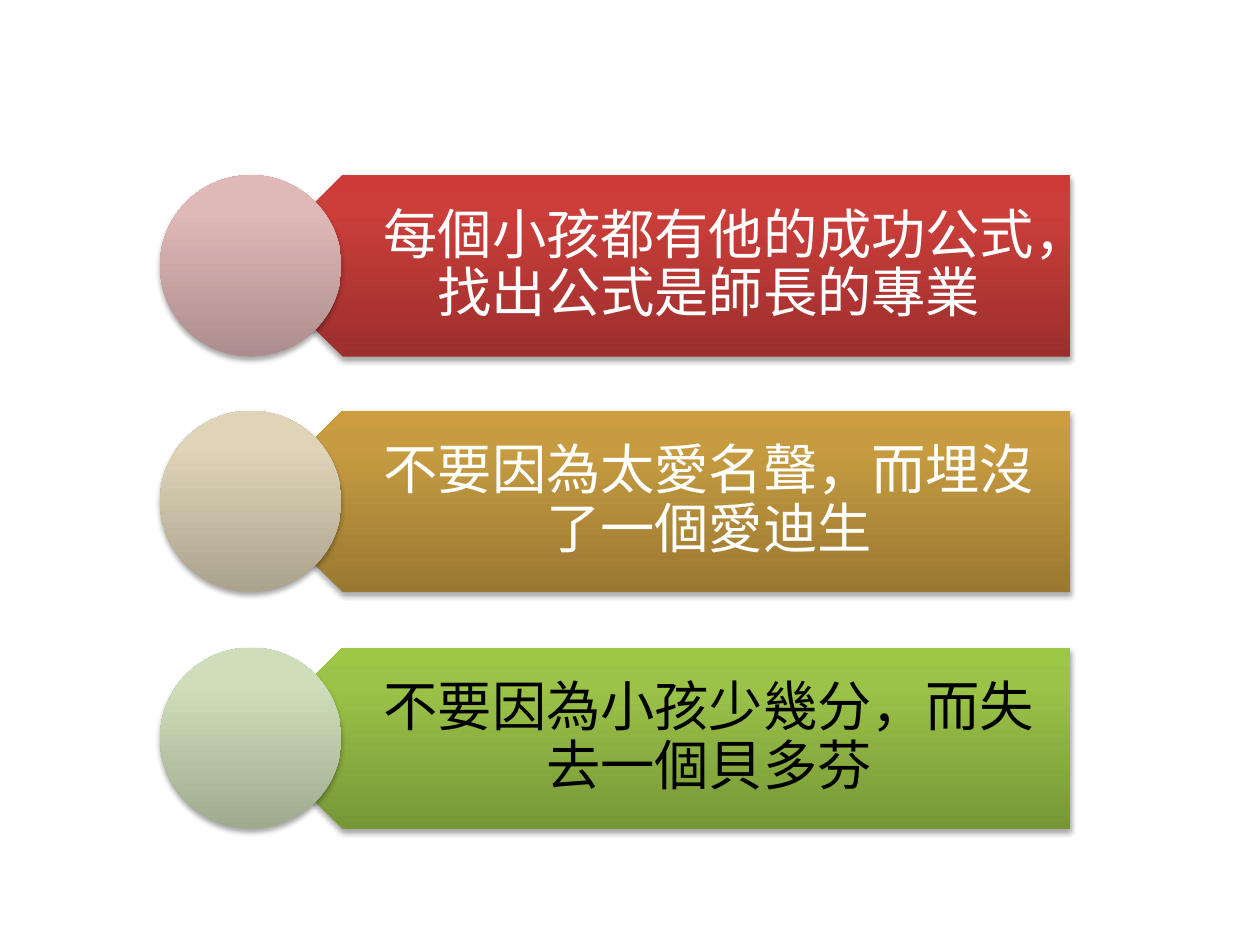
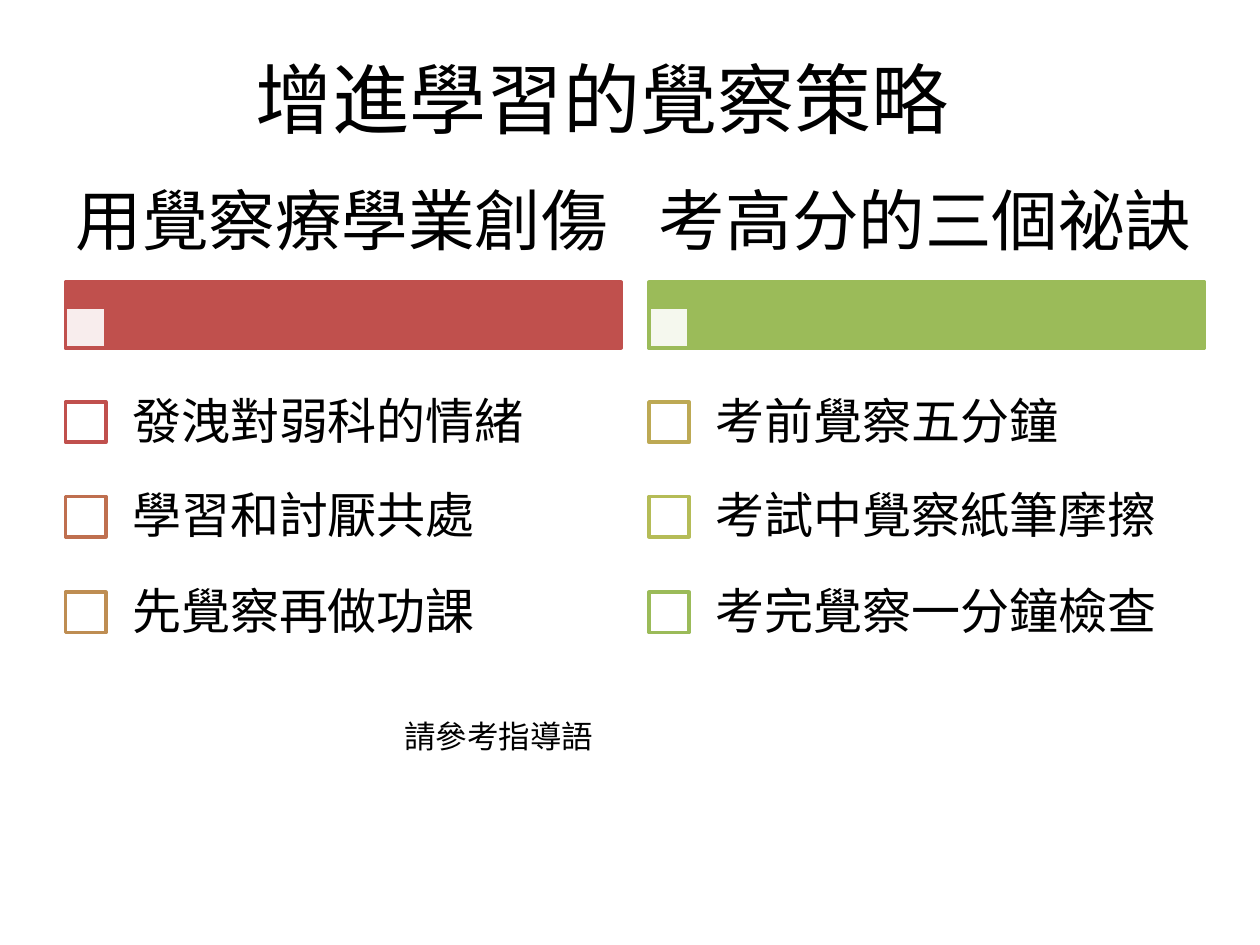
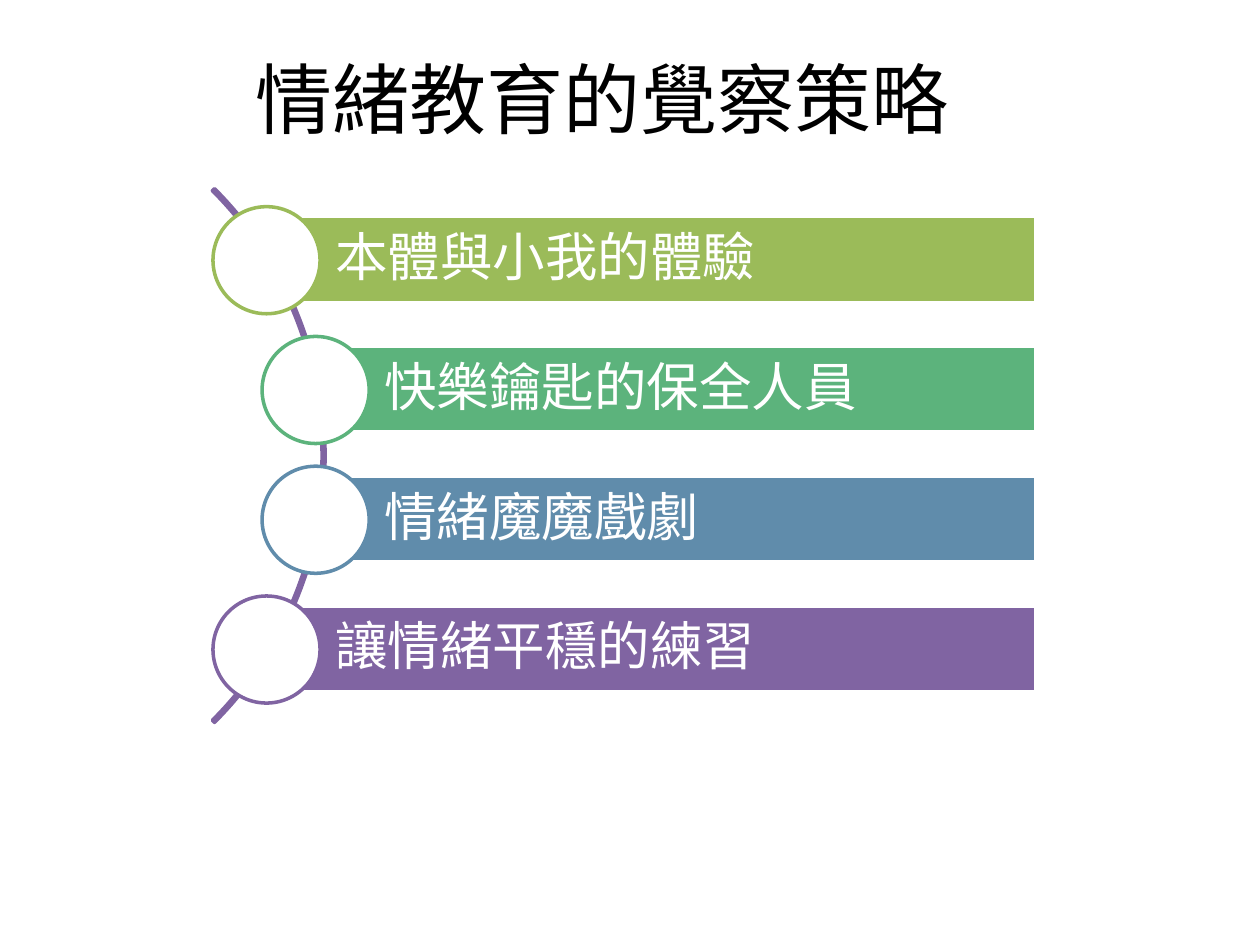
from copy import deepcopy

from pptx import Presentation
from pptx.dml.color import RGBColor
from pptx.enum.shapes import MSO_SHAPE
from pptx.enum.text import MSO_ANCHOR, MSO_AUTO_SIZE, PP_ALIGN
from pptx.oxml import parse_xml
from pptx.oxml.ns import nsdecls
from pptx.util import Pt

EMU_PER_PX = 9144  # 100 px to the inch
FONT = "Calibri"

WHITE = RGBColor(0xFF, 0xFF, 0xFF)
BLACK = RGBColor(0x00, 0x00, 0x00)
RED = RGBColor(0xC0, 0x50, 0x4D)
RUST = RGBColor(0xBF, 0x6F, 0x4F)
OCHRE = RGBColor(0xBE, 0x8D, 0x52)
SAND = RGBColor(0xBD, 0xA9, 0x54)
LIME = RGBColor(0xB5, 0xBC, 0x57)
GREEN = RGBColor(0x9B, 0xBB, 0x59)
TEAL = RGBColor(0x5C, 0xB3, 0x7C)
BLUE = RGBColor(0x60, 0x8C, 0xAB)
PURPLE = RGBColor(0x80, 0x64, 0xA2)

# Gradient colours from bottom to top
GRADIENT_POSITIONS = (0, 0.8, 1)
RED_BAND = (RGBColor(0x9C, 0x2F, 0x2D), RGBColor(0xCB, 0x3E, 0x3A), RGBColor(0xCE, 0x3B, 0x37))
GOLD_BAND = (RGBColor(0x99, 0x78, 0x32), RGBColor(0xC7, 0x9C, 0x41), RGBColor(0xCB, 0x9D, 0x3F))
GREEN_BAND = (RGBColor(0x77, 0x97, 0x37), RGBColor(0x9B, 0xC3, 0x48), RGBColor(0x9D, 0xC7, 0x46))
PINK_DISC = (RGBColor(0xAD, 0x8D, 0x8D), RGBColor(0xE0, 0xB8, 0xB7), RGBColor(0xE2, 0xB8, 0xB7))
CREAM_DISC = (RGBColor(0xAC, 0xA3, 0x8E), RGBColor(0xDF, 0xD4, 0xB8), RGBColor(0xE1, 0xD5, 0xB8))
MINT_DISC = (RGBColor(0x9F, 0xAB, 0x8F), RGBColor(0xCF, 0xDE, 0xBA), RGBColor(0xD0, 0xDF, 0xBA))

SHADOW = (
    f'<a:outerShdw {nsdecls("a")} blurRad="39370" dist="22860" dir="5400000" rotWithShape="0">'
    '<a:srgbClr val="000000"><a:alpha val="35000"/></a:srgbClr></a:outerShdw>'
)


def px(length):
    return length * EMU_PER_PX


def set_all(target, values):
    for name, value in values.items():
        setattr(target, name, value)


class SlideBuilder:
    def __init__(self):
        self.deck = Presentation()
        set_all(self.deck, {"slide_width": px(1000), "slide_height": px(750)})
        self.page = None

    def new_page(self):
        self.page = self.deck.slides.add_slide(self.deck.slide_layouts[6])

    def shape(self, kind, place, fill=None, line=None):
        shape = self.page.shapes.add_shape(kind, *map(px, place))
        shape.shadow.inherit = False
        if fill is None:
            shape.fill.background()
        else:
            shape.fill.solid()
            shape.fill.fore_color.rgb = fill
        if line is None:
            shape.line.fill.background()
        else:
            shape.line.color.rgb = line
            shape.line.width = Pt(2)
        return shape

    def glossy_shape(self, kind, place, colours, rotation=0):
        """Add a shape with a three-stop gradient and a soft shadow."""
        shape = self.shape(kind, place)
        shape.rotation = rotation
        shape.fill.gradient()
        shape.fill.gradient_angle = 90
        properties = shape._element.spPr
        gradient = properties.xpath("a:gradFill")[0]
        gradient.set("rotWithShape", "0")
        stop_list = gradient.xpath("a:gsLst")[0]
        stop_list.append(deepcopy(stop_list[-1]))
        for stop, position, colour in zip(shape.fill.gradient_stops, GRADIENT_POSITIONS, colours):
            stop.position = position
            stop.color.rgb = colour
        properties.xpath("a:effectLst")[0].append(parse_xml(SHADOW))

    def checkbox(self, x, y, line, opacity=100):
        box = self.shape(MSO_SHAPE.RECTANGLE, (x, y, 32, 32), WHITE, line)
        if opacity < 100:
            colour = box._element.spPr.xpath("a:solidFill/a:srgbClr")[0]
            colour.append(parse_xml(f'<a:alpha {nsdecls("a")} val="{opacity * 1000}"/>'))

    def label(self, box, text, size, colour=BLACK, insets=(10, 5, 10, 5),
              align=PP_ALIGN.LEFT, spacing=0.9, **frame_values):
        """Put one styled paragraph into a box."""
        frame = box.text_frame
        sides = ("margin_left", "margin_top", "margin_right", "margin_bottom")
        set_all(frame, dict(zip(sides, map(px, insets))))
        set_all(frame, {"word_wrap": True, "vertical_anchor": MSO_ANCHOR.MIDDLE} | frame_values)
        para = frame.paragraphs[0]
        set_all(para, {"alignment": align, "line_spacing": spacing})
        span = para.add_run()
        span.text = text
        set_all(span.font, {"name": FONT, "size": Pt(size)})
        span.font.color.rgb = colour

    def text(self, place, text, size, **style):
        self.label(self.page.shapes.add_textbox(*map(px, place)), text, size, **style)

    def plain_text(self, place, text, size, wrap=True):
        self.text(place, text, size, spacing=1.0, word_wrap=wrap,
                  vertical_anchor=MSO_ANCHOR.TOP, auto_size=MSO_AUTO_SIZE.SHAPE_TO_FIT_TEXT)

    def title(self, text):
        self.plain_text((193, 36, 576, 84), text, 44, wrap=False)


def add_beliefs(builder):
    builder.new_page()
    beliefs = (
        ("每個小孩都有他的成功公式，找出公式是師長的專業", RED_BAND, PINK_DISC, WHITE),
        ("不要因為太愛名聲，而埋沒了一個愛迪生", GOLD_BAND, CREAM_DISC, WHITE),
        ("不要因為小孩少幾分，而失去一個貝多芬", GREEN_BAND, MINT_DISC, BLACK),
    )
    for row, (belief, band, disc, colour) in enumerate(beliefs):
        y = 139 + row * 375 // 2
        builder.glossy_shape(MSO_SHAPE.PENTAGON, (200, y, 649, 144), band, rotation=180)
        builder.text((236, y, 613, 144), belief, 31, colour=colour,
                     insets=(64, 13, 24, 13), align=PP_ALIGN.CENTER)
        builder.glossy_shape(MSO_SHAPE.OVAL, (127, y, 144, 144), disc)


def add_learning_strategies(builder):
    builder.new_page()
    builder.title("增進學習的覺察策略")
    columns = (
        ("用覺察療學業創傷", RED,
         (("發洩對弱科的情緒", RED), ("學習和討厭共處", RUST), ("先覺察再做功課", OCHRE))),
        ("考高分的三個祕訣", GREEN,
         (("考前覺察五分鐘", SAND), ("考試中覺察紙筆摩擦", LIME), ("考完覺察一分鐘檢查", GREEN))),
    )
    for column, (heading, accent, items) in enumerate(columns):
        x = 52 + column * 463
        builder.shape(MSO_SHAPE.RECTANGLE, (x, 224, 441, 52), accent, accent)
        builder.checkbox(x, 244, accent, opacity=90)
        builder.text((x, 131, 441, 93), heading, 38, insets=(8, 5, 8, 5))
        for row, (item, colour) in enumerate(items):
            y = 319 + row * 151 // 2
            builder.checkbox(x, y, colour)
            builder.text((x + 31, y - 21, 410, 76), item, 28, insets=(22, 22, 22, 22))
    builder.plain_text((311, 564, 457, 40), "請參考指導語", 18)


def add_emotion_strategies(builder):
    builder.new_page()
    builder.title("情緒教育的覺察策略")
    arc = builder.shape(MSO_SHAPE.BLOCK_ARC, (-341, 62, 599, 599), line=PURPLE)
    for index, value in enumerate((189, 27, 0.004)):
        arc.adjustments[index] = value
    strategies = (
        ("本體與小我的體驗", GREEN, 169),
        ("快樂鑰匙的保全人員", TEAL, 208),
        ("情緒魔魔戲劇", BLUE, 208),
        ("讓情緒平穩的練習", PURPLE, 169),
    )
    bar_right = 822
    for row, (strategy, colour, circle_x) in enumerate(strategies):
        y = 172 + row * 103
        bar_x = circle_x + 43
        bar = builder.shape(MSO_SHAPE.RECTANGLE, (bar_x, y, bar_right - bar_x, 68), colour, WHITE)
        builder.label(bar, strategy, 30, colour=WHITE, insets=(54, 8, 8, 8))
        builder.shape(MSO_SHAPE.OVAL, (circle_x, y - 8, 85, 85), WHITE, colour)


def main():
    builder = SlideBuilder()
    add_beliefs(builder)
    add_learning_strategies(builder)
    add_emotion_strategies(builder)
    builder.deck.save("out.pptx")


if __name__ == "__main__":
    main()
